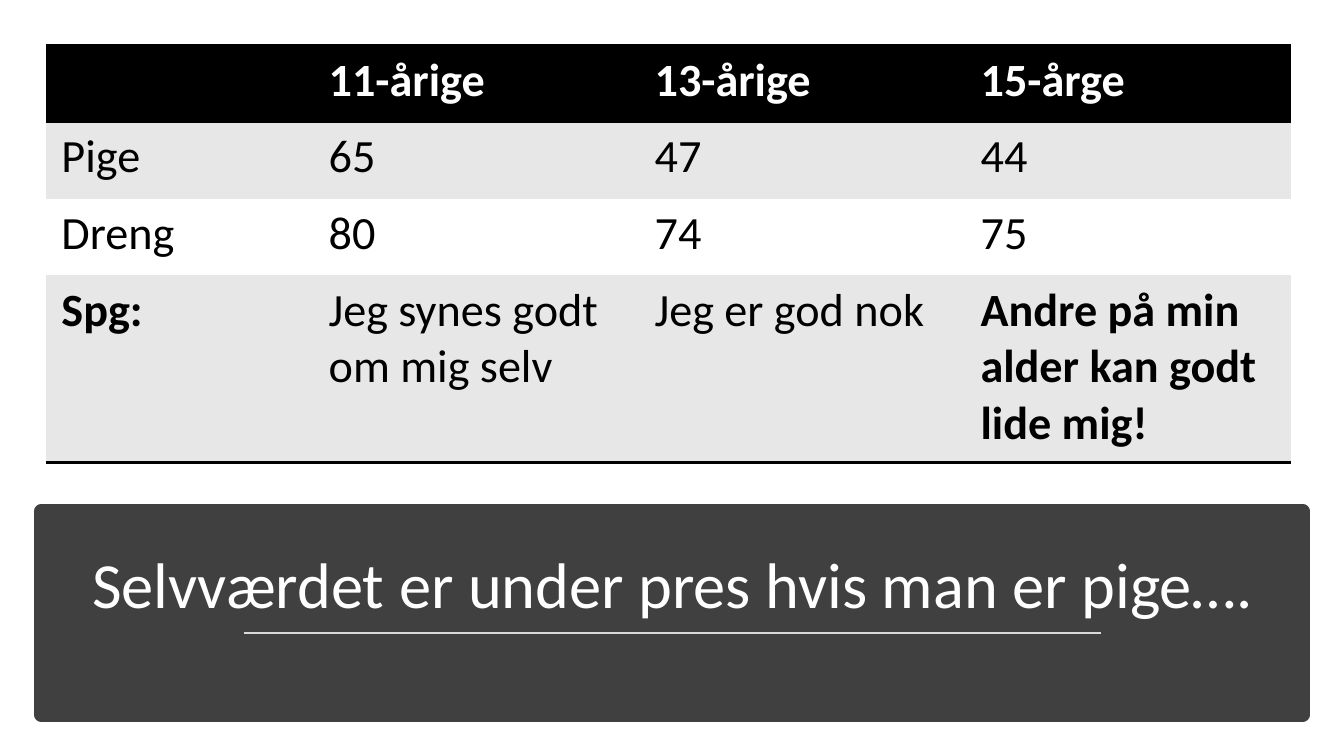
from lxml import etree
from pptx import Presentation
from pptx import util as u
from pptx.dml.color import RGBColor
from pptx.enum import shapes, text
from pptx.oxml import ns

COLORS = {"black": "000000", "white": "FFFFFF", "band": "E7E7E7",
          "panel": "404040", "rule": "D9D9D9"}
FONT = "Calibri"
PLAIN_TABLE_STYLE = "{2D5ABB26-0587-4C30-8999-92F81FD0307C}"
ANSWERS = [
    ["", "11-årige", "13-årige", "15-årge"],
    ["Pige", "65", "47", "44"],
    ["Dreng", "80", "74", "75"],
    ["Spg:", "Jeg synes godt om mig selv", "Jeg er god nok",
     "Andre på min alder kan godt lide mig!"],
]
BOLD_CELLS = {(0, 0), (0, 1), (0, 2), (0, 3), (3, 0), (3, 3)}


def color(name):
    """Return the named colour of the slide."""
    return RGBColor.from_string(COLORS[name])


def write_text(frame, content, size, fill, bold=False, align=text.PP_ALIGN.LEFT,
               line_spacing=1.0):
    """Write one formatted paragraph into a text frame."""
    frame.word_wrap = True
    paragraph = frame.paragraphs[0]
    paragraph.alignment = align
    paragraph.line_spacing = line_spacing
    run = paragraph.add_run()
    run.text = content
    run.font.name = FONT
    run.font.size = u.Pt(size)
    run.font.bold = bold
    run.font.color.rgb = color(fill)


def add_cell_borders(cell, sides):
    """Draw black borders on the given sides of a table cell."""
    properties = cell._tc.get_or_add_tcPr()
    for index, side in enumerate(sides):
        line = etree.Element(ns.qn(f"a:ln{side}"), w=str(u.Pt(2)))
        fill = etree.SubElement(line, ns.qn("a:solidFill"))
        etree.SubElement(fill, ns.qn("a:srgbClr"), val=COLORS["black"])
        properties.insert(index, line)


def add_answer_table(slide, left, top, width, height):
    """Place the table of answers by age and gender in the given box."""
    frame = slide.shapes.add_table(len(ANSWERS), len(ANSWERS[0]), u.Inches(left),
                                   u.Inches(top), u.Inches(width), u.Inches(height))
    table = frame.table
    table._tbl.tblPr.find(ns.qn("a:tableStyleId")).text = PLAIN_TABLE_STYLE
    label_width, row_height = 2.65, 0.76
    for index, column in enumerate(table.columns):
        column.width = u.Inches((width - label_width) / 3 if index else label_width)
    for index, row in enumerate(table.rows):
        row.height = u.Inches(row_height if index < 3 else height - 3 * row_height)
    borders = {0: "TB", 3: "B"}
    for row, values in enumerate(ANSWERS):
        background = "black" if row == 0 else "band" if row % 2 else "white"
        for column, value in enumerate(values):
            cell = table.cell(row, column)
            cell.margin_left = cell.margin_right = u.Inches(0.15)
            cell.margin_top = cell.margin_bottom = u.Inches(0.07)
            cell.fill.solid()
            cell.fill.fore_color.rgb = color(background)
            add_cell_borders(cell, borders.get(row, ""))
            if value:
                write_text(cell.text_frame, value, size=33,
                           fill="black" if row else "white",
                           bold=(row, column) in BOLD_CELLS)


def add_title_panel(slide, left, top, width, height):
    """Place the dark panel with its title and rule in the given box."""
    panel = slide.shapes.add_shape(shapes.MSO_SHAPE.RECTANGLE, u.Inches(left),
                                   u.Inches(top), u.Inches(width), u.Inches(height))
    panel.shadow.inherit = False
    panel.fill.solid()
    panel.fill.fore_color.rgb = color("panel")
    panel.line.color.rgb = color("panel")
    panel.line.width = u.Pt(10)

    title = slide.shapes.add_textbox(u.Inches(left + 0.17), u.Inches(top + 0.13),
                                     u.Inches(width - 0.33), u.Inches(1.02))
    title.text_frame.vertical_anchor = text.MSO_ANCHOR.BOTTOM
    write_text(title.text_frame, "Selvværdet er under pres hvis man er pige….",
               size=46, fill="white", align=text.PP_ALIGN.CENTER, line_spacing=0.9)

    rule_top = u.Inches(top + 1.21)
    rule = slide.shapes.add_connector(shapes.MSO_CONNECTOR.STRAIGHT,
                                      u.Inches(left + 2.01), rule_top,
                                      u.Inches(left + width - 2), rule_top)
    rule.line.color.rgb = color("rule")
    rule.line.width = u.Pt(1.75)
    etree.SubElement(rule._element.spPr, ns.qn("a:effectLst"))


def main():
    """Build the slide and save it."""
    presentation = Presentation()
    presentation.slide_width = u.Inches(13.33)
    presentation.slide_height = u.Inches(7.5)
    slide = presentation.slides.add_slide(presentation.slide_layouts[6])
    add_title_panel(slide, 0.41, 5.07, 12.51, 2.02)
    add_answer_table(slide, 0.46, 0.45, 12.35, 4.14)
    presentation.save("out.pptx")


if __name__ == "__main__":
    main()
